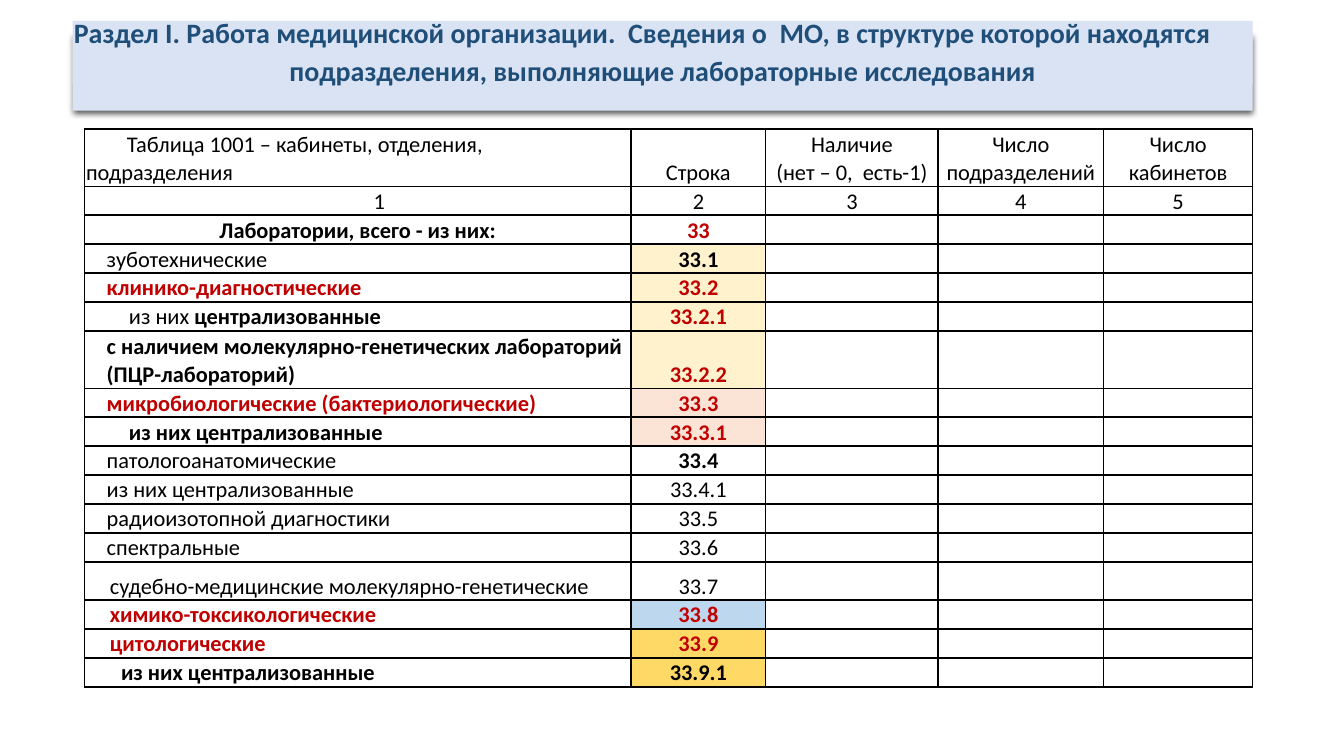
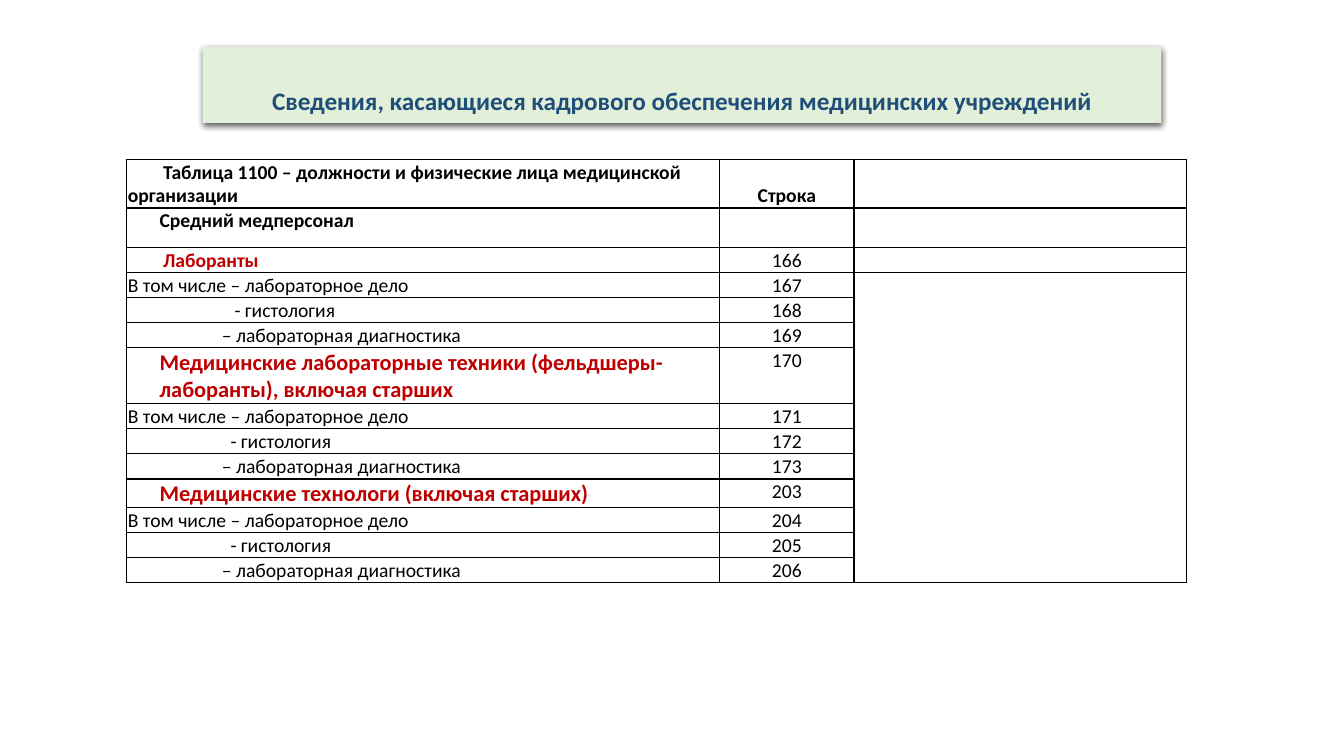
"""Build two slides with the laboratory service tables of a medical report."""
from lxml import etree
from pptx import Presentation
from pptx.dml.color import RGBColor
from pptx.enum import shapes, text
from pptx.oxml import ns
from pptx.util import Cm, Pt

FONT = "Calibri"
NAVY = RGBColor(0x1F, 0x4E, 0x79)
BLACK = RGBColor(0, 0, 0)
RED = RGBColor(0xC0, 0, 0)
ICE = RGBColor(0xDA, 0xE3, 0xF3)
MINT = RGBColor(0xE2, 0xF0, 0xD9)
CREAM = RGBColor(0xFF, 0xF2, 0xCC)
PEACH = RGBColor(0xFB, 0xE4, 0xD5)
SKY = RGBColor(0xBD, 0xD7, 0xEE)
GOLD = RGBColor(0xFF, 0xD9, 0x66)

LEFT, CENTER = text.PP_ALIGN.LEFT, text.PP_ALIGN.CENTER
TOP, BOTTOM = text.MSO_ANCHOR.TOP, text.MSO_ANCHOR.BOTTOM
PLAIN = {"bold": False, "color": BLACK}
BOLD = {"bold": True, "color": BLACK}
ALERT = {"bold": True, "color": RED}
TITLE = {"bold": True, "color": NAVY}

LAB_ROWS = [
    (0.73, 0.56, [("зуботехнические", PLAIN)], "33.1", BOLD, CREAM),
    (0.73, 0.56, [("клинико-диагностические", ALERT)], "33.2", ALERT, CREAM),
    (0.73, 1.12, [("из них ", PLAIN), ("централизованные", BOLD)], "33.2.1", ALERT, CREAM),
    (1.44, 0.56, [("с наличием молекулярно-генетических лабораторий (ПЦР-лабораторий)", BOLD)],
     "33.2.2", ALERT, CREAM),
    (0.73, 0.56, [("микробиологические (бактериологические)", ALERT)], "33.3", ALERT, PEACH),
    (0.73, 1.12, [("из них централизованные", BOLD)], "33.3.1", ALERT, PEACH),
    (0.73, 0.56, [("патологоанатомические", PLAIN)], "33.4", BOLD, None),
    (0.73, 0.56, [("из них централизованные", PLAIN)], "33.4.1", PLAIN, None),
    (0.73, 0.56, [("радиоизотопной диагностики", PLAIN)], "33.5", PLAIN, None),
    (0.73, 0.56, [("спектральные", PLAIN)], "33.6", PLAIN, None),
    (0.96, 0.64, [("судебно-медицинские молекулярно-генетические", PLAIN)], "33.7", PLAIN, None),
    (0.73, 0.64, [("химико-токсикологические", ALERT)], "33.8", ALERT, SKY),
    (0.73, 0.64, [("цитологические", ALERT)], "33.9", ALERT, GOLD),
    (0.73, 0.92, [("из них централизованные", BOLD)], "33.9.1", BOLD, GOLD),
]

STAFF_GROUPS = [
    (0.63, 0.93, "Лаборанты", 14, 166, 2.73),
    (1.39, 0.84, "Медицинские лабораторные техники (фельдшеры-лаборанты), включая старших",
     16, 170, 2.63),
    (0.71, 0.84, "Медицинские технологи (включая старших)", 16, 203, 2.63),
]


def add_run(p, words, size, style):
    """Add one formatted run to a paragraph."""
    r = p.add_run()
    r.text = words
    for name, value in {"name": FONT, "size": Pt(size), "bold": style["bold"]}.items():
        setattr(r.font, name, value)
    r.font.color.rgb = style["color"]


def add_band(s, box, fill, shadow=True):
    """Add a borderless title band, with a soft shadow below if wanted."""
    sp = s.shapes.add_shape(shapes.MSO_SHAPE.RECTANGLE, *map(Cm, box))
    sp.shadow.inherit = False
    sp.fill.solid()
    sp.fill.fore_color.rgb = fill
    sp.line.fill.background()
    if shadow:
        effects = sp._element.spPr.find(ns.qn("a:effectLst"))
        outer = etree.SubElement(effects, ns.qn("a:outerShdw"), blurRad="57150",
                                 dist="19050", dir="5400000", algn="t", rotWithShape="0")
        color = etree.SubElement(outer, ns.qn("a:srgbClr"), val="000000")
        etree.SubElement(color, ns.qn("a:alpha"), val="63000")
    return sp


def write_title(sp, lines, size, anchor, bottom):
    """Write title lines given as (words, alignment, line spacing)."""
    tf = sp.text_frame
    settings = {"word_wrap": True, "vertical_anchor": anchor, "margin_left": Cm(0.03),
                "margin_right": Cm(0.03), "margin_top": Cm(0.03), "margin_bottom": Cm(bottom)}
    for name, value in settings.items():
        setattr(tf, name, value)
    for i, (words, align, spacing) in enumerate(lines):
        p = tf.add_paragraph() if i else tf.paragraphs[0]
        p.alignment, p.line_spacing = align, spacing
        if i < len(lines) - 1:
            p.space_after = Pt(6)
        add_run(p, words, size, TITLE)


def add_borders(cell):
    """Draw thin black lines on the four sides of a cell."""
    tcPr = cell._tc.get_or_add_tcPr()
    for side in ("lnL", "lnR", "lnT", "lnB"):
        ln = etree.SubElement(tcPr, ns.qn("a:" + side), w="12700")
        fill = etree.SubElement(ln, ns.qn("a:solidFill"))
        etree.SubElement(fill, ns.qn("a:srgbClr"), val=str(BLACK))


def add_grid(s, left, top, widths, heights, size):
    """Add an empty ruled table without fills."""
    frame = s.shapes.add_table(len(heights), len(widths), Cm(left), Cm(top),
                               Cm(sum(widths)), Cm(sum(heights)))
    table = frame.table
    table.first_row = table.horz_banding = False
    for column, width in zip(table.columns, widths):
        column.width = Cm(width)
    for row, height in zip(table.rows, heights):
        row.height = Cm(height)
        for cell in row.cells:
            add_borders(cell)
            cell.fill.background()
            cell.margin_left = cell.margin_right = Cm(0.04)
            cell.margin_top, cell.margin_bottom = Cm(0.03), 0
            p = cell.text_frame.paragraphs[0]
            etree.SubElement(p._p, ns.qn("a:endParaRPr"), sz=str(size * 100))
    return table


def write_cell(cell, parts, size, align=CENTER, anchor=BOTTOM, left=0.04, first=0, fill=None):
    """Write styled parts into a cell; a line break starts a new paragraph."""
    cell.vertical_anchor = anchor
    cell.margin_left = Cm(left)
    if fill is not None:
        cell.fill.solid()
        cell.fill.fore_color.rgb = fill
    tf = cell.text_frame
    p = tf.paragraphs[0]
    for words, style in parts:
        for i, line in enumerate(words.split("\n")):
            if i:
                p = tf.add_paragraph()
            p.alignment = align
            add_run(p, line, size, style)
    if first:
        tf.paragraphs[0]._p.get_or_add_pPr().set("indent", str(Cm(first)))


def build_labs(s):
    """Fill the slide on laboratories within the organisation."""
    add_band(s, (1.83, 0.86, 29.74, 1.93), ICE)
    sp = add_band(s, (1.83, 0.53, 29.74, 1.6), ICE, shadow=False)
    write_title(sp, [
        ("Раздел I. Работа медицинской организации.  Сведения о  МО, "
         "в структуре которой находятся", LEFT, 0.8),
        ("подразделения, выполняющие лабораторные исследования", CENTER, 0.9),
    ], 20, TOP, 0.43)

    heights = [1.44, 0.73, 0.73] + [row[0] for row in LAB_ROWS]
    table = add_grid(s, 2.13, 3.25, [13.77, 3.4, 4.34, 4.17, 3.76], heights, 16)
    write_cell(table.cell(0, 0), [("Таблица 1001 – кабинеты, отделения, подразделения", PLAIN)],
               16, LEFT, first=1.03)
    heads = ["Строка", "Наличие\n(нет – 0,  есть-1)", "Число подразделений", "Число кабинетов"]
    for col, head in enumerate(heads, 1):
        write_cell(table.cell(0, col), [(head, PLAIN)], 16)
    for col in range(5):
        write_cell(table.cell(1, col), [(str(col + 1), PLAIN)], 16, left=0.04 if col else 1.12)
    write_cell(table.cell(2, 0), [("Лаборатории, всего - из них:", BOLD)], 16)
    write_cell(table.cell(2, 1), [("33", ALERT)], 16)
    for i, (_, left, parts, code, style, fill) in enumerate(LAB_ROWS, 3):
        write_cell(table.cell(i, 0), parts, 16, LEFT, left=left)
        write_cell(table.cell(i, 1), [(code, style)], 16, fill=fill)


def build_staff(s):
    """Fill the slide on laboratory staff."""
    sp = add_band(s, (5.11, 1.19, 24.16, 1.91), MINT)
    write_title(sp, [("Сведения, касающиеся кадрового обеспечения медицинских учреждений",
                      CENTER, 0.8)], 18, BOTTOM, 0.2)

    rows = []
    for height, left, group, size, code, deep in STAFF_GROUPS:
        rows.append((height, left, group, size, ALERT, code))
        details = [(0.04, "В том числе – лабораторное дело"), (deep, "- гистология"),
                   (2.41, "– лабораторная диагностика")]
        for i, (indent, words) in enumerate(details, 1):
            rows.append((0.63, indent, words, 14, PLAIN, code + i))

    table = add_grid(s, 3.18, 4.01, [14.96, 3.38, 8.38],
                     [1.22, 0.99] + [row[0] for row in rows], 14)
    write_cell(table.cell(0, 0),
               [("Таблица 1100 – должности и физические лица медицинской организации", BOLD)],
               14, LEFT, first=0.89)
    write_cell(table.cell(0, 1), [("Строка", BOLD)], 14)
    write_cell(table.cell(1, 0), [("Средний медперсонал", BOLD)], 14, LEFT, TOP, left=0.84)
    for i, (_, left, words, size, style, code) in enumerate(rows, 2):
        write_cell(table.cell(i, 0), [(words, style)], size, LEFT, TOP, left=left)
        write_cell(table.cell(i, 1), [(str(code), PLAIN)], 14, anchor=TOP)
    table.cell(3, 2).merge(table.cell(len(rows) + 1, 2))


def main():
    """Create the presentation and save it."""
    prs = Presentation()
    prs.slide_width, prs.slide_height = Cm(33.87), Cm(19.05)
    for build in (build_labs, build_staff):
        build(prs.slides.add_slide(prs.slide_layouts[6]))
    prs.save("out.pptx")


if __name__ == "__main__":
    main()
